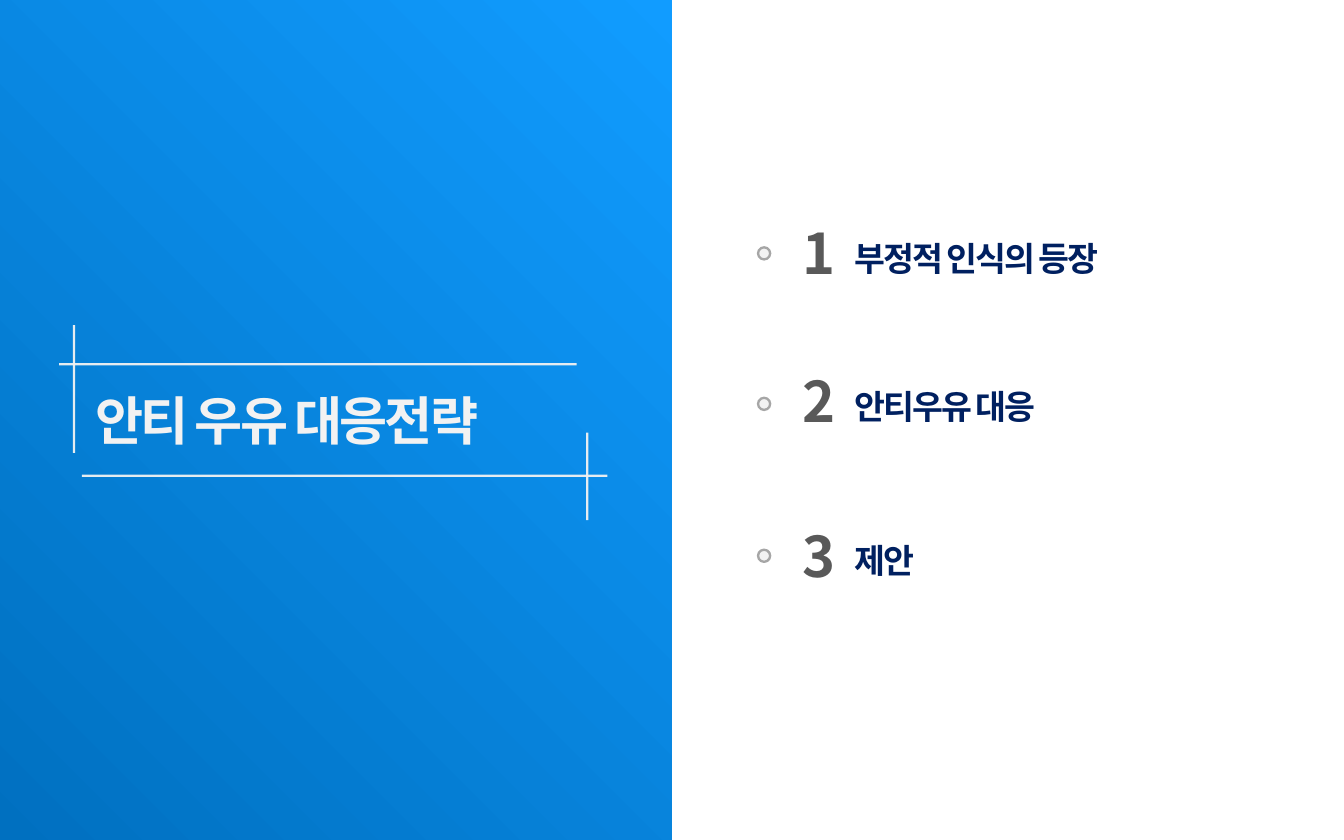
from lxml.etree import SubElement
from pptx import Presentation
from pptx.dml.color import RGBColor
from pptx.enum.shapes import MSO_CONNECTOR, MSO_SHAPE
from pptx.enum.text import MSO_ANCHOR, MSO_AUTO_SIZE, PP_ALIGN
from pptx.oxml.ns import qn
from pptx.util import Inches, Pt

# Content
TITLE = "안티 우유 대응전략"
# heading, width of its box, top of number, heading and dot
AGENDA = [
    ("부정적 인식의 등장", 2.23, 1.58, 1.72, 1.84),
    ("안티우유 대응", 1.69, 2.68, 2.82, 2.96),
    ("제안", 0.68, 3.83, 3.97, 4.09),
]
TITLE_RULES = [
    (0.44, 2.71, 4.29, 2.71),
    (0.61, 3.54, 4.52, 3.54),
    (4.37, 3.22, 4.37, 3.87),
    (0.55, 2.42, 0.55, 3.37),
]

# Look
THEME = {
    "font": "Noto Sans CJK KR",
    "panel": ("119CFF", "0070C0"),
    "rule": "F2F2F2",
    "dot": "F2F2F2",
    "dot_line": "A6A6A6",
    "line_width": 1.25,
    "title": {"size": 28, "color": "F2F2F2", "spacing": -1.5},
    "number": {"size": 30, "color": "595959", "spacing": -1.1},
    "heading": {"size": 18, "color": "002060", "spacing": -1.1},
}


def color(name):
    return RGBColor.from_string(name)


def place(shape, left, top, width, height):
    frame = {"left": left, "top": top, "width": width, "height": height}
    for name, value in frame.items():
        setattr(shape, name, Inches(value))


def write(box, text, style, wrap=True, align=PP_ALIGN.LEFT):
    settings = {"word_wrap": wrap, "auto_size": MSO_AUTO_SIZE.SHAPE_TO_FIT_TEXT,
                "vertical_anchor": MSO_ANCHOR.TOP}
    for name, value in settings.items():
        setattr(box.text_frame, name, value)
    para = box.text_frame.paragraphs[0]
    para.alignment = align
    span = para.add_run()
    span.text = text
    look = {"name": THEME["font"], "size": Pt(style["size"]), "bold": True}
    for name, value in look.items():
        setattr(span.font, name, value)
    span.font.color.rgb = color(style["color"])
    # Letter spacing and the East Asian typeface
    properties = span.font._element
    properties.set("spc", str(round(style["spacing"] * 100)))
    SubElement(properties, qn("a:ea")).set("typeface", THEME["font"])


def add_text(page, area, text, style, wrap=True):
    box = page.shapes.add_textbox(*map(Inches, area))
    write(box, text, style, wrap)


def add_panel(page, width, height):
    panel = page.shapes.add_shape(MSO_SHAPE.RECTANGLE, 0, 0, width, height)
    panel.shadow.inherit = False
    panel.line.fill.background()
    panel.fill.gradient()
    panel.fill.gradient_angle = 225
    for stop, name in zip(panel.fill.gradient_stops, THEME["panel"]):
        stop.color.rgb = color(name)


def add_rule(page, ends):
    rule = page.shapes.add_connector(MSO_CONNECTOR.STRAIGHT, *map(Inches, ends))
    rule.line.width = Pt(THEME["line_width"])
    rule.line.color.rgb = color(THEME["rule"])
    paint = rule.line.fill._xPr.find(qn("a:solidFill"))[0]
    SubElement(paint, qn("a:alpha")).set("val", "94000")
    SubElement(rule._element.spPr, qn("a:effectLst"))


def add_dot(page, left, top, size):
    dot = page.shapes.add_shape(MSO_SHAPE.OVAL, *map(Inches, (left, top, size, size)))
    dot.shadow.inherit = False
    dot.fill.solid()
    dot.fill.fore_color.rgb = color(THEME["dot"])
    dot.line.color.rgb = color(THEME["dot_line"])
    dot.line.width = Pt(THEME["line_width"])


def main():
    deck = Presentation()
    deck.slide_width, deck.slide_height = Inches(10), Inches(6.25)
    page = deck.slides.add_slide(deck.slide_layouts[5])

    # Blue half with the framed title
    add_panel(page, deck.slide_width // 2, deck.slide_height)
    for ends in TITLE_RULES:
        add_rule(page, ends)
    title = page.shapes.title
    place(title, 0.61, 2.84, 3.63, 0.57)
    write(title, TITLE, THEME["title"], align=PP_ALIGN.JUSTIFY)
    page.shapes._spTree.append(title._element)  # in front of the panel

    # Agenda
    for number, (heading, width, number_top, heading_top, dot_top) in enumerate(AGENDA, 1):
        add_dot(page, 5.64, dot_top, 0.09)
        add_text(page, (5.87, number_top, 0.55, 0.61), str(number), THEME["number"])
        add_text(page, (6.26, heading_top, width, 0.4), heading, THEME["heading"], wrap=False)

    deck.save("out.pptx")


if __name__ == "__main__":
    main()
